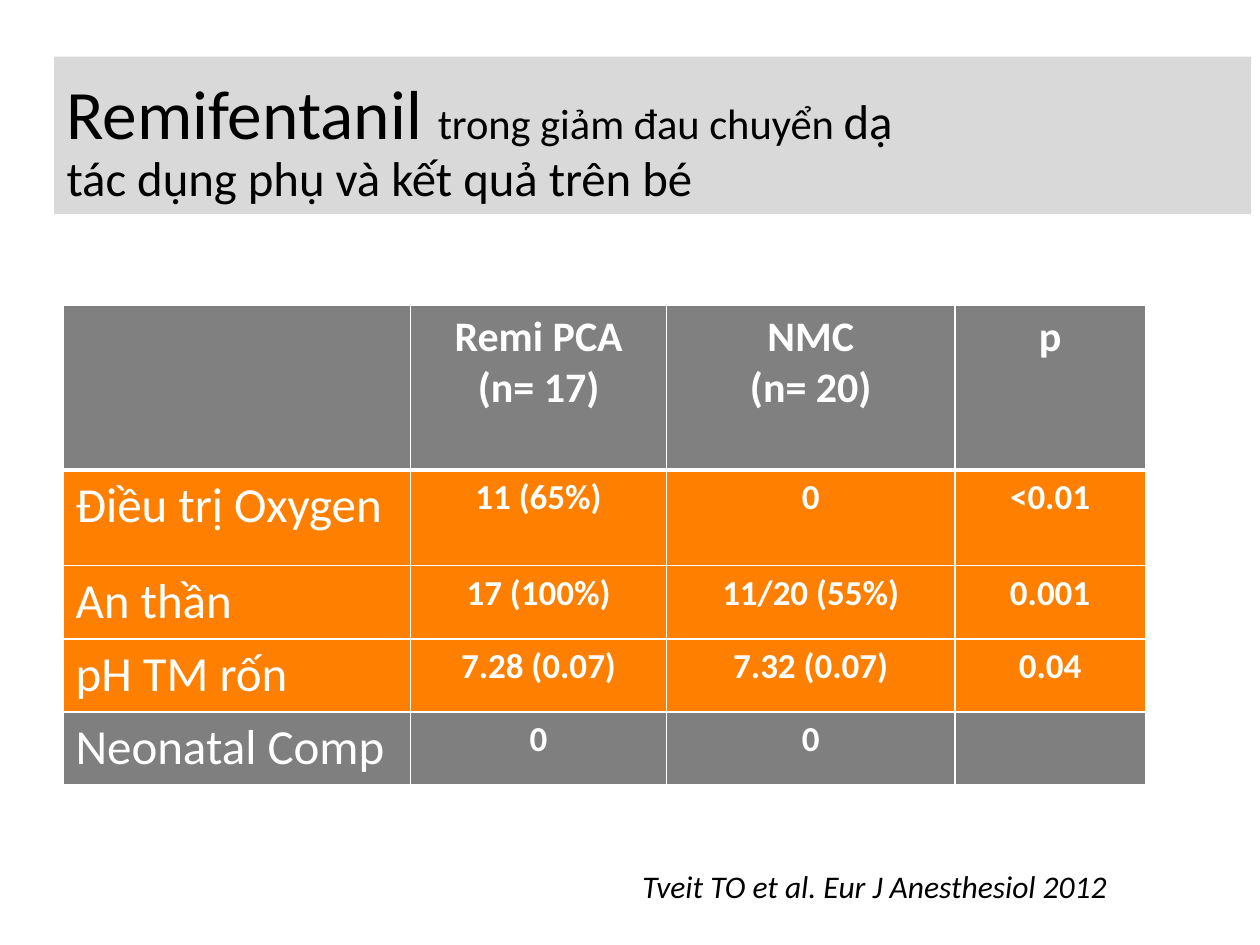
"""Build a slide comparing remifentanil side effects and neonatal outcomes."""
import pptx
import pptx.dml.color
import pptx.enum.shapes
import pptx.enum.text
import pptx.oxml
import pptx.oxml.ns
import pptx.util

Inches = pptx.util.Inches
Align = pptx.enum.text.PP_ALIGN
Anchor = pptx.enum.text.MSO_ANCHOR
RGB = pptx.dml.color.RGBColor.from_string
HUES = {"band": "D9D9D9", "head": "808080", "hot": "FF8000",
        "calm": "7F7F7F", "white": "FFFFFF", "black": "000000"}


def write(para, text, size=20, hue="black", bold=False, italic=False, align=Align.LEFT):
    para.alignment = align
    run = para.add_run()
    run.text = text
    font = run.font
    font.name, font.size = "Calibri", pptx.util.Pt(size)
    font.bold, font.italic = bold, italic
    font.color.rgb = RGB(HUES[hue])


def edge(cell, side, width):
    props = cell._tc.get_or_add_tcPr()
    line = pptx.oxml.parse_xml(
        f'<a:{side} {pptx.oxml.ns.nsdecls("a")} w="{pptx.util.Pt(width)}">'
        f'<a:solidFill><a:srgbClr val="{HUES["white"]}"/></a:solidFill></a:{side}>')
    props.append(line)


deck = pptx.Presentation()
deck.slide_width, deck.slide_height = Inches(10), Inches(7.5)
slide = deck.slides.add_slide(deck.slide_layouts[6])

band = slide.shapes.add_shape(pptx.enum.shapes.MSO_SHAPE.RECTANGLE,
                              Inches(0.43), Inches(0.45), Inches(9.5), Inches(1.25))
band.shadow.inherit = False
band.fill.solid()
band.fill.fore_color.rgb = RGB(HUES["band"])
band.line.fill.background()
frame = band.text_frame
frame.word_wrap = True
frame.vertical_anchor = Anchor.MIDDLE
frame.margin_top = Inches(0.18)
title = frame.paragraphs[0]
title.line_spacing = 0.9
write(title, "Remifentanil ", size=39.6)
write(title, "trong giảm đau chuyển ", size=24.3)
write(title, "dạ", size=27.9)
title.add_line_break()
write(title, "tác dụng phụ và kết quả trên bé", size=27.9)

rows = [
    ("head", 1.31, ["", "Remi PCA\n(n= 17)", "NMC\n(n= 20)", "p"]),
    ("hot", 0.76, ["Điều trị Oxygen", "11 (65%)", "0", "<0.01"]),
    ("hot", 0.58, ["An thần", "17 (100%)", "11/20 (55%)", "0.001"]),
    ("hot", 0.58, ["pH TM rốn", "7.28 (0.07)", "7.32 (0.07)", "0.04"]),
    ("calm", 0.58, ["Neonatal Comp", "0", "0", ""]),
]
widths = [2.76, 2.03, 2.29, 1.51]
table = slide.shapes.add_table(len(rows), len(widths), Inches(0.5), Inches(2.42),
                               Inches(sum(widths)), Inches(3.81)).table
for col, width in zip(table.columns, widths):
    col.width = Inches(width)
for r, (hue, height, texts) in enumerate(rows):
    table.rows[r].height = Inches(height)
    for c, text in enumerate(texts):
        cell = table.cell(r, c)
        for side in ("lnL", "lnR", "lnT", "lnB"):
            thick = (r, side) in ((0, "lnB"), (1, "lnT"))
            edge(cell, side, 3 if thick else 1)
        cell.fill.solid()
        cell.fill.fore_color.rgb = RGB(HUES[hue])
        label = r > 0 and c == 0
        size = 28 if label else 24 if r == 0 else 20
        for i, part in enumerate(text.split("\n") if text else []):
            para = cell.text_frame.add_paragraph() if i else cell.text_frame.paragraphs[0]
            write(para, part, size=size, hue="white", bold=not label,
                  align=Align.LEFT if label else Align.CENTER)

cite = slide.shapes.add_textbox(Inches(5), Inches(6.83), Inches(4.01), Inches(0.4))
cite.text_frame.word_wrap = False
cite.text_frame.auto_size = pptx.enum.text.MSO_AUTO_SIZE.SHAPE_TO_FIT_TEXT
write(cite.text_frame.paragraphs[0], "Tveit TO et al. Eur J Anesthesiol 2012",
      size=18, italic=True)

deck.save("out.pptx")
